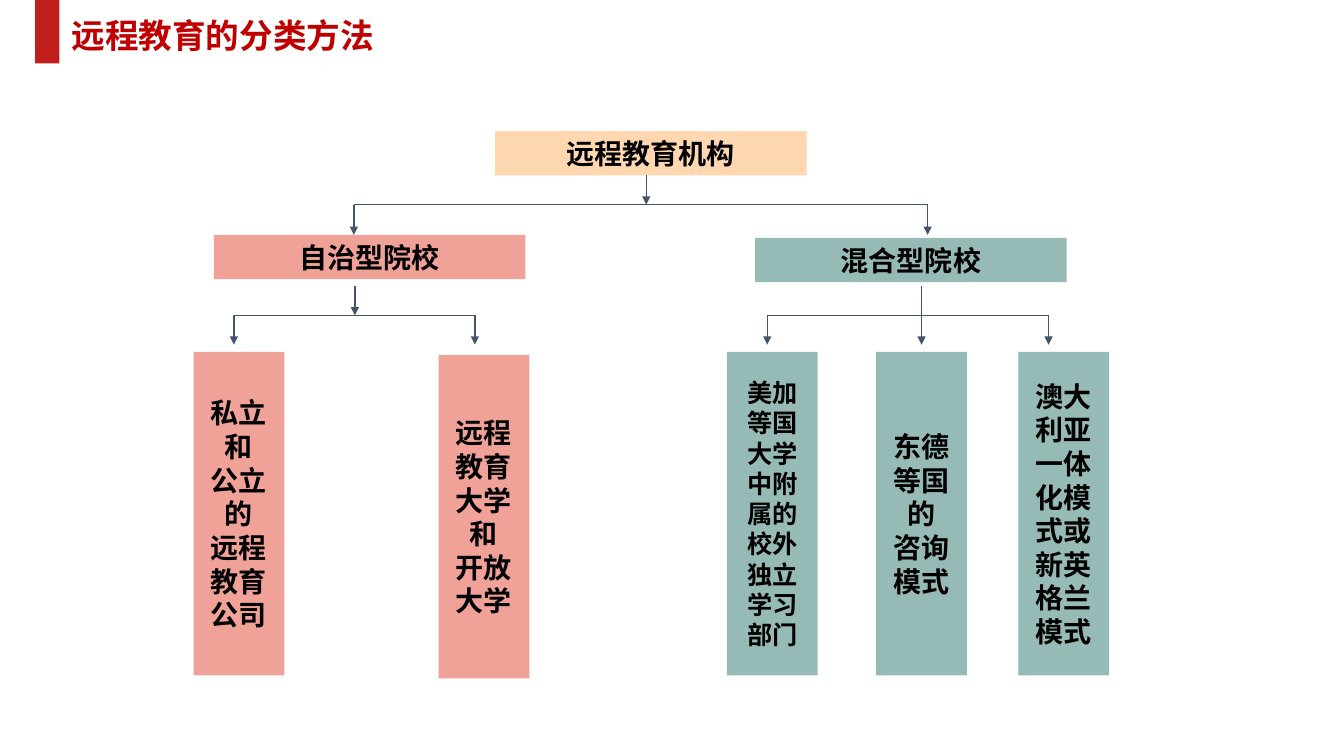
from dataclasses import dataclass

from lxml.etree import SubElement
from pptx import Presentation
from pptx.dml.color import RGBColor
from pptx.enum.shapes import MSO_CONNECTOR, MSO_SHAPE
from pptx.enum.text import MSO_ANCHOR, PP_ALIGN
from pptx.oxml.ns import qn
from pptx.util import Inches, Pt

FONT = "Noto Sans CJK SC"
COLORS = {
    "accent": "C11E1E",
    "title": "C00000",
    "root": "FFCC99",
    "autonomous": "F0A298",
    "mixed": "96BBB6",
    "text": "000000",
    "line": "44546A",
}
HEADING_SIZE = (3.09, 0.44)
COLUMN_SIZE = (0.9, 3.21)


@dataclass
class Box:
    text: str
    left: float
    top: float
    size: tuple[float, float]
    color: str
    points: int = 20
    opacity: int = 100


@dataclass
class Branch:
    """A stem that drops to a bar, from which arrows reach the children."""
    stem_x: float
    top: float
    bar_y: float
    stem_end: float
    bottom: float
    child_xs: tuple[float, float]


BOXES = [
    Box("远程教育机构", 4.91, 1.3, HEADING_SIZE, "root", opacity=76),
    Box("自治型院校", 2.12, 2.33, HEADING_SIZE, "autonomous"),
    Box("混合型院校", 7.49, 2.36, HEADING_SIZE, "mixed"),
    Box("私立\n和\n公立\n的\n远程\n教育\n公司", 1.92, 3.49, COLUMN_SIZE, "autonomous"),
    Box("远程\n教育\n大学\n和\n开放\n大学", 4.35, 3.52, COLUMN_SIZE, "autonomous"),
    Box("美加\n等国\n大学\n中附\n属的\n校外\n独立\n学习\n部门", 7.21, 3.49, COLUMN_SIZE,
        "mixed", points=18),
    Box("东德\n等国\n的\n咨询\n模式", 8.69, 3.49, COLUMN_SIZE, "mixed"),
    Box("澳大\n利亚\n一体\n化模\n式或\n新英\n格兰\n模式", 10.1, 3.49, COLUMN_SIZE, "mixed"),
]
BRANCHES = [
    Branch(6.41, 1.74, 2.03, 2.03, 2.33, (3.51, 9.2)),
    Branch(3.52, 2.84, 3.13, 3.13, 3.42, (2.32, 4.71)),
    Branch(9.14, 2.84, 3.13, 3.42, 3.42, (7.61, 10.4)),
]


def rgb(name: str) -> RGBColor:
    return RGBColor.from_string(COLORS[name])


def write(frame, text: str, *, points: int, color: str = "text",
          align=PP_ALIGN.CENTER, anchor=MSO_ANCHOR.MIDDLE, wrap: bool = False) -> None:
    frame.text = text
    frame.word_wrap = wrap
    frame.vertical_anchor = anchor
    for paragraph in frame.paragraphs:
        paragraph.alignment = align
        for run in paragraph.runs:
            run.font.size = Pt(points)
            run.font.bold = True
            run.font.color.rgb = rgb(color)
            run.font.name = FONT
            # East Asian glyphs take their font from a:ea
            SubElement(run.font._element, qn("a:ea"), typeface=FONT)


def add_block(slide, left: float, top: float, size: tuple[float, float],
              color: str, opacity: int = 100):
    block = slide.shapes.add_shape(
        MSO_SHAPE.RECTANGLE, Inches(left), Inches(top), *map(Inches, size))
    block.shadow.inherit = False
    block.fill.solid()
    block.fill.fore_color.rgb = rgb(color)
    block.line.fill.background()
    if opacity < 100:
        fill_color = block._element.spPr.find(qn("a:solidFill"))[0]
        SubElement(fill_color, qn("a:alpha"), val=str(opacity * 1000))
    return block


def add_box(slide, box: Box) -> None:
    block = add_block(slide, box.left, box.top, box.size, box.color, box.opacity)
    write(block.text_frame, box.text, points=box.points)


def add_line(slide, start: tuple[float, float], end: tuple[float, float],
             arrow: bool = True) -> None:
    line = slide.shapes.add_connector(
        MSO_CONNECTOR.STRAIGHT, *map(Inches, start + end))
    line.line.color.rgb = rgb("line")
    line.line.width = Pt(1)
    if arrow:
        SubElement(line.line._get_or_add_ln(), qn("a:tailEnd"), type="triangle")
    SubElement(line._element.spPr, qn("a:effectLst"))


def add_branch(slide, branch: Branch) -> None:
    first, last = branch.child_xs
    add_line(slide, (branch.stem_x, branch.top), (branch.stem_x, branch.stem_end))
    add_line(slide, (first, branch.bar_y), (last, branch.bar_y), arrow=False)
    for x in branch.child_xs:
        add_line(slide, (x, branch.bar_y), (x, branch.bottom))


def main() -> None:
    deck = Presentation()
    deck.slide_width, deck.slide_height = Inches(13.33), Inches(7.5)
    slide = deck.slides.add_slide(deck.slide_layouts[5])

    # Title with its accent bar
    add_block(slide, 0.35, 0, (0.24, 0.63), "accent")
    title = slide.shapes.title
    title.left, title.top = Inches(0.61), Inches(0.1)
    title.width, title.height = Inches(4.34), Inches(0.5)
    write(title.text_frame, "远程教育的分类方法", points=24, color="title",
          align=PP_ALIGN.LEFT, anchor=MSO_ANCHOR.TOP, wrap=True)

    # Classification tree
    for box in BOXES:
        add_box(slide, box)
    for branch in BRANCHES:
        add_branch(slide, branch)

    deck.save("out.pptx")


if __name__ == "__main__":
    main()
